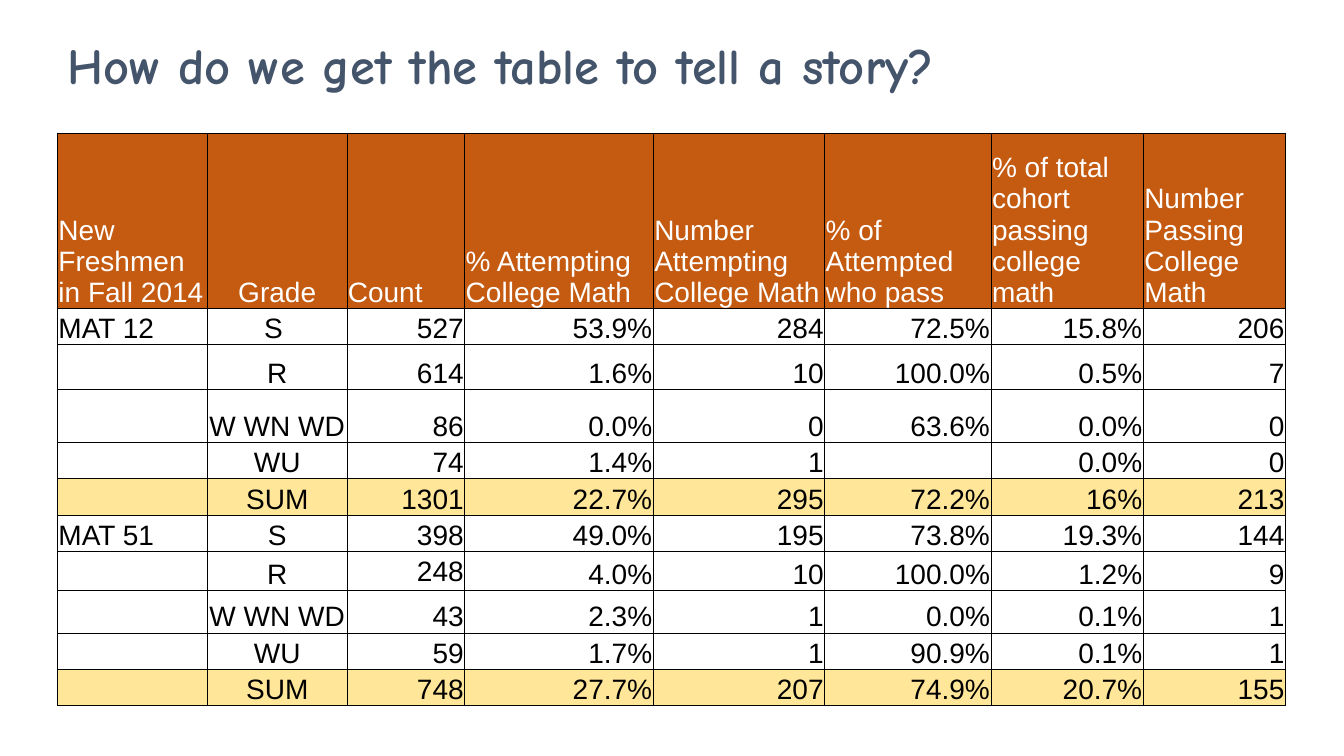
from dataclasses import dataclass

from lxml.etree import SubElement
from pptx import Presentation
from pptx.dml.color import RGBColor
from pptx.enum.text import MSO_ANCHOR as Anchor, MSO_AUTO_SIZE as AutoSize, PP_ALIGN as Align
from pptx.oxml.ns import qn
from pptx.slide import Slide
from pptx.table import _Cell as Cell
from pptx.text.text import TextFrame
from pptx.util import Emu, Pt

EMU_PER_PX = 9144  # 100 px to the inch

BLACK = RGBColor(0x00, 0x00, 0x00)
WHITE = RGBColor(0xFF, 0xFF, 0xFF)
SLATE = RGBColor(0x44, 0x54, 0x6A)
RUST = RGBColor(0xC5, 0x5A, 0x11)
SAND = RGBColor(0xFF, 0xE6, 0x99)


@dataclass(frozen=True)
class GradeRow:
    height: int
    values: tuple[str, ...]
    count_anchor: Anchor = Anchor.BOTTOM

    @property
    def fill(self) -> RGBColor | None:
        return SAND if self.values[1] == "SUM" else None


COLUMN_WIDTHS = (149, 138, 117, 187, 170, 165, 151, 141)
HEADER_HEIGHT = 174
HEADINGS = (
    "New Freshmen in Fall 2014",
    "Grade",
    "Count",
    "% Attempting College Math",
    "Number Attempting College Math",
    "% of Attempted who pass",
    "% of total cohort passing college math",
    "Number Passing College Math",
)
GRADE_ROWS = (
    GradeRow(36, ("MAT 12", "S ", "527", "53.9%", "284", "72.5%", "15.8%", "206")),
    GradeRow(44, ("", "R", "614", "1.6%", "10", "100.0%", "0.5%", "7")),
    GradeRow(53, ("", "W WN WD", "86", "0.0%", "0", "63.6%", "0.0%", "0")),
    GradeRow(36, ("", "WU", "74", "1.4%", "1", "", "0.0%", "0")),
    GradeRow(36, ("", "SUM", "1301", "22.7%", "295", "72.2%", "16%", "213")),
    GradeRow(36, ("MAT 51", "S", "398", "49.0%", "195", "73.8%", "19.3%", "144")),
    GradeRow(39, ("", "R", "248", "4.0%", "10", "100.0%", "1.2%", "9"), Anchor.MIDDLE),
    GradeRow(42, ("", "W WN WD", "43", "2.3%", "1", "0.0%", "0.1%", "1")),
    GradeRow(36, ("", "WU", "59", "1.7%", "1", "90.9%", "0.1%", "1")),
    GradeRow(36, ("", "SUM", "748", "27.7%", "207", "74.9%", "20.7%", "155")),
)


def px(length: int) -> Emu:
    return Emu(length * EMU_PER_PX)


def write(frame: TextFrame, text: str, *, size: int, font: str, color: RGBColor,
          bold: bool = False, align: Align = Align.LEFT) -> None:
    paragraph = frame.paragraphs[0]
    paragraph.alignment = align
    if not text:
        return
    run = paragraph.add_run()
    run.text = text
    run.font.size = Pt(size)
    run.font.name = font
    run.font.bold = bold
    run.font.color.rgb = color


def add_borders(cell: Cell) -> None:
    """Draw all four edges; call before filling, as the schema puts edges first."""
    properties = cell._tc.get_or_add_tcPr()
    for edge in ("a:lnL", "a:lnR", "a:lnT", "a:lnB"):
        line = SubElement(properties, qn(edge), w=str(Pt(0.5)))
        solid = SubElement(line, qn("a:solidFill"))
        SubElement(solid, qn("a:srgbClr"), val=str(BLACK))


def fill_cell(cell: Cell, text: str, *, color: RGBColor, fill: RGBColor | None,
              align: Align, anchor: Anchor = Anchor.BOTTOM) -> None:
    cell.margin_left = cell.margin_right = cell.margin_top = px(1)
    cell.margin_bottom = 0
    cell.vertical_anchor = anchor
    add_borders(cell)
    if fill is None:
        cell.fill.background()
    else:
        cell.fill.solid()
        cell.fill.fore_color.rgb = fill
    write(cell.text_frame, text, size=20, font="Arial", color=color, align=align)


def add_title(slide: Slide) -> None:
    frame = slide.shapes.add_textbox(px(57), px(29), px(936), px(71)).text_frame
    frame.word_wrap = True
    frame.auto_size = AutoSize.SHAPE_TO_FIT_TEXT
    write(frame, "How do we get the table to tell a story?",
          size=36, font="Comic Neue", color=SLATE, bold=True)


def add_grade_table(slide: Slide) -> None:
    heights = (HEADER_HEIGHT, *(row.height for row in GRADE_ROWS))
    table = slide.shapes.add_table(
        len(heights), len(COLUMN_WIDTHS), px(57), px(132),
        px(sum(COLUMN_WIDTHS)), px(sum(heights))).table
    table.first_row = table.horz_banding = False
    for column, width in zip(table.columns, COLUMN_WIDTHS):
        column.width = px(width)
    for table_row, height in zip(table.rows, heights):
        table_row.height = px(height)

    for col, heading in enumerate(HEADINGS):
        fill_cell(table.cell(0, col), heading, color=WHITE, fill=RUST,
                  align=Align.CENTER if heading == "Grade" else Align.LEFT)

    value_aligns = (Align.LEFT, Align.CENTER) + (Align.RIGHT,) * (len(HEADINGS) - 2)
    count_column = HEADINGS.index("Count")
    for row, grade in enumerate(GRADE_ROWS, start=1):
        for col, (value, align) in enumerate(zip(grade.values, value_aligns)):
            anchor = grade.count_anchor if col == count_column else Anchor.BOTTOM
            fill_cell(table.cell(row, col), value, color=BLACK, fill=grade.fill,
                      align=align, anchor=anchor)


def main() -> None:
    deck = Presentation()
    deck.slide_width, deck.slide_height = px(1333), px(750)
    slide = deck.slides.add_slide(deck.slide_layouts[6])
    add_grade_table(slide)
    add_title(slide)
    deck.save("out.pptx")


if __name__ == "__main__":
    main()
